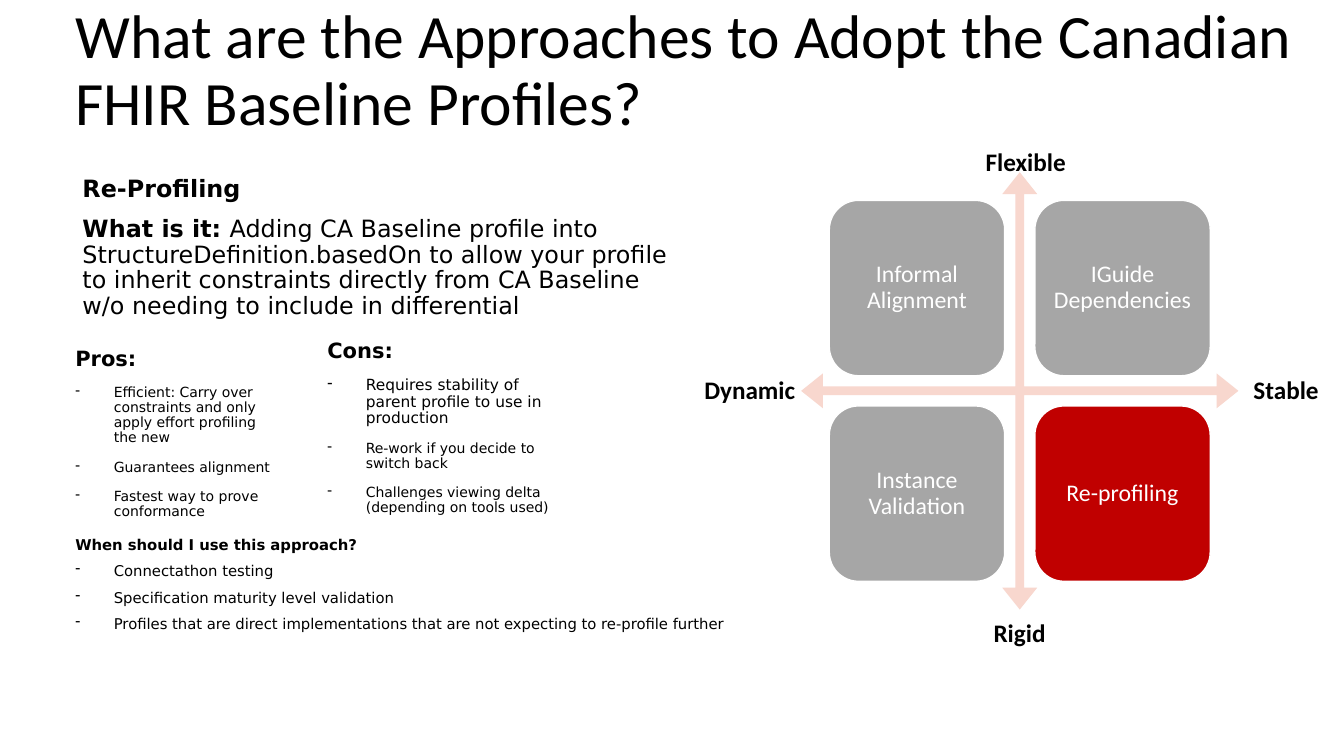
"""Build the slide on approaches to adopting the Canadian FHIR baseline profiles."""
from dataclasses import dataclass

from lxml.etree import SubElement
from pptx import Presentation
from pptx.dml.color import RGBColor
from pptx.enum.shapes import MSO_SHAPE
from pptx.enum.text import MSO_ANCHOR, PP_ALIGN
from pptx.oxml.ns import qn
from pptx.util import Cm, Pt


@dataclass(frozen=True)
class Theme:
    """Colours, fonts and type sizes of the slide."""
    ink: RGBColor = RGBColor(0, 0, 0)
    paper: RGBColor = RGBColor(255, 255, 255)
    axis: RGBColor = RGBColor(0xF8, 0xD7, 0xCE)
    muted: RGBColor = RGBColor(0xA6, 0xA6, 0xA6)
    accent: RGBColor = RGBColor(0xC0, 0, 0)
    heading_font: str = "Calibri"
    body_font: str = "DejaVu Sans"
    title: float = 44
    label: float = 18
    lead: float = 17
    list_heading: float = 15
    large_item: float = 11
    usage: float = 10.6
    item: float = 10


THEME = Theme()


def style(paragraph, size, color=THEME.ink, font=THEME.heading_font, bold=None):
    """Set the font of a whole paragraph."""
    paragraph.font.size = Pt(size)
    paragraph.font.name = font
    paragraph.font.color.rgb = color
    paragraph.font.bold = bold


def add_box(slide, left, top, width, height):
    """Add a wrapping text box and return its text frame."""
    frame = slide.shapes.add_textbox(Cm(left), Cm(top), Cm(width), Cm(height)).text_frame
    frame.word_wrap = True
    return frame


def add_title(slide, text):
    """Add the slide title."""
    frame = add_box(slide, 1.65, -0.03, 33.86, 3.68)
    frame.vertical_anchor = MSO_ANCHOR.MIDDLE
    title = frame.paragraphs[0]
    title.text = text
    title.line_spacing = 0.9
    style(title, THEME.title)


def add_axis_label(slide, text, left, top, width=2.62):
    """Add a bold label at one end of an axis."""
    label = add_box(slide, left, top, width, 1.02).paragraphs[0]
    label.text = text
    style(label, THEME.label, bold=True)


def paint(shape, color):
    """Fill a shape flatly, without a shadow."""
    shape.shadow.inherit = False
    shape.fill.solid()
    shape.fill.fore_color.rgb = color


def add_axes(slide):
    """Add the four-way arrow behind the quadrants."""
    axes = slide.shapes.add_shape(
        MSO_SHAPE.QUAD_ARROW, Cm(20.19), Cm(4.34), Cm(11.02), Cm(11.02))
    for index, share in enumerate((0.02, 0.04, 0.05)):
        axes.adjustments[index] = share
    paint(axes, THEME.axis)
    axes.line.fill.background()


def add_quadrant(slide, text, column, row, color):
    """Add one approach at its place in the two-by-two grid."""
    side, pitch = Cm(4.42), 5.18
    quadrant = slide.shapes.add_shape(
        MSO_SHAPE.ROUNDED_RECTANGLE,
        Cm(20.9 + column * pitch), Cm(5.05 + row * pitch), side, side)
    paint(quadrant, color)
    quadrant.line.color.rgb = THEME.paper
    quadrant.line.width = Pt(1)
    frame = quadrant.text_frame
    frame.word_wrap = True
    frame.vertical_anchor = MSO_ANCHOR.MIDDLE
    frame.margin_left = frame.margin_right = Cm(0.18)
    frame.margin_top = frame.margin_bottom = Cm(0.18)
    approach = frame.paragraphs[0]
    approach.text = text
    approach.alignment = PP_ALIGN.CENTER
    approach.line_spacing = 0.9
    style(approach, THEME.lead, THEME.paper)


def add_body_line(frame, text, size, spacing=0.9, bold=None):
    """Add a body paragraph, reusing the empty first one."""
    line = frame.paragraphs[0] if not frame.text else frame.add_paragraph()
    line.text = text
    line.line_spacing = spacing
    line.space_before = Pt(10)
    style(line, size, font=THEME.body_font, bold=bold)
    return line


def add_dash(line):
    """Give a paragraph a hanging dash bullet."""
    properties = line._p.get_or_add_pPr()
    properties.set("marL", str(Cm(0.97)))
    properties.set("indent", str(-Cm(0.97)))
    dash = SubElement(properties, qn("a:buChar"))
    dash.set("char", "-")
    properties.find(qn("a:defRPr")).addprevious(dash)


def add_list(slide, place, heading, heading_size, items, spacing=0.9):
    """Add a bold heading with dashed items, each a text and a size."""
    frame = add_box(slide, *place)
    add_body_line(frame, heading, heading_size, spacing, bold=True)
    for text, size in items:
        add_dash(add_body_line(frame, text, size, spacing))


def add_definition(slide, heading, term, meaning):
    """Add the heading and the definition of the approach."""
    frame = add_box(slide, 1.83, 4.34, 15.67, 3.89)
    add_body_line(frame, heading, THEME.lead, bold=True)
    definition = add_body_line(frame, term, THEME.lead)
    definition.runs[0].font.bold = True
    definition.add_run().text = meaning


def main():
    """Build and save the slide."""
    deck = Presentation()
    deck.slide_width, deck.slide_height = Cm(33.87), Cm(19.05)
    slide = deck.slides.add_slide(deck.slide_layouts[6])

    add_axes(slide)
    approaches = (("Informal Alignment", "IGuide Dependencies"),
                  ("Instance Validation", "Re-profiling"))
    for row, pair in enumerate(approaches):
        for column, approach in enumerate(pair):
            color = THEME.accent if approach == "Re-profiling" else THEME.muted
            add_quadrant(slide, approach, column, row, color)

    add_title(slide, "What are the Approaches to Adopt the Canadian "
                     "FHIR Baseline Profiles?")
    add_axis_label(slide, "Stable", 31.34, 9.32)
    add_axis_label(slide, "Rigid", 24.79, 15.42)
    add_axis_label(slide, "Flexible", 24.59, 3.56)
    add_axis_label(slide, "Dynamic", 17.5, 9.32, 2.87)

    add_definition(
        slide, "Re-Profiling", "What is it: ",
        "Adding CA Baseline profile into StructureDefinition.basedOn to allow "
        "your profile to inherit constraints directly from CA Baseline w/o "
        "needing to include in differential")
    add_list(slide, (1.65, 8.66, 5.74, 4.52), "Pros:", THEME.list_heading, (
        ("Efficient: Carry over constraints and only apply effort profiling the new",
         THEME.item),
        ("Guarantees alignment", THEME.item),
        ("Fastest way to prove conformance", THEME.item)))
    add_list(slide, (8, 8.46, 6.45, 4.52), "Cons:", THEME.list_heading, (
        ("Requires stability of parent profile to use in production", THEME.large_item),
        ("Re-work if you decide to switch back", THEME.item),
        ("Challenges viewing delta (depending on tools used)", THEME.item)))
    add_list(slide, (1.65, 13.49, 18.01, 2.77),
             "When should I use this approach?", THEME.usage, (
        ("Connectathon testing", THEME.usage),
        ("Specification maturity level validation", THEME.usage),
        ("Profiles that are direct implementations that are not expecting to "
         "re-profile further", THEME.usage)), spacing=0.7)

    deck.save("out.pptx")


if __name__ == "__main__":
    main()
